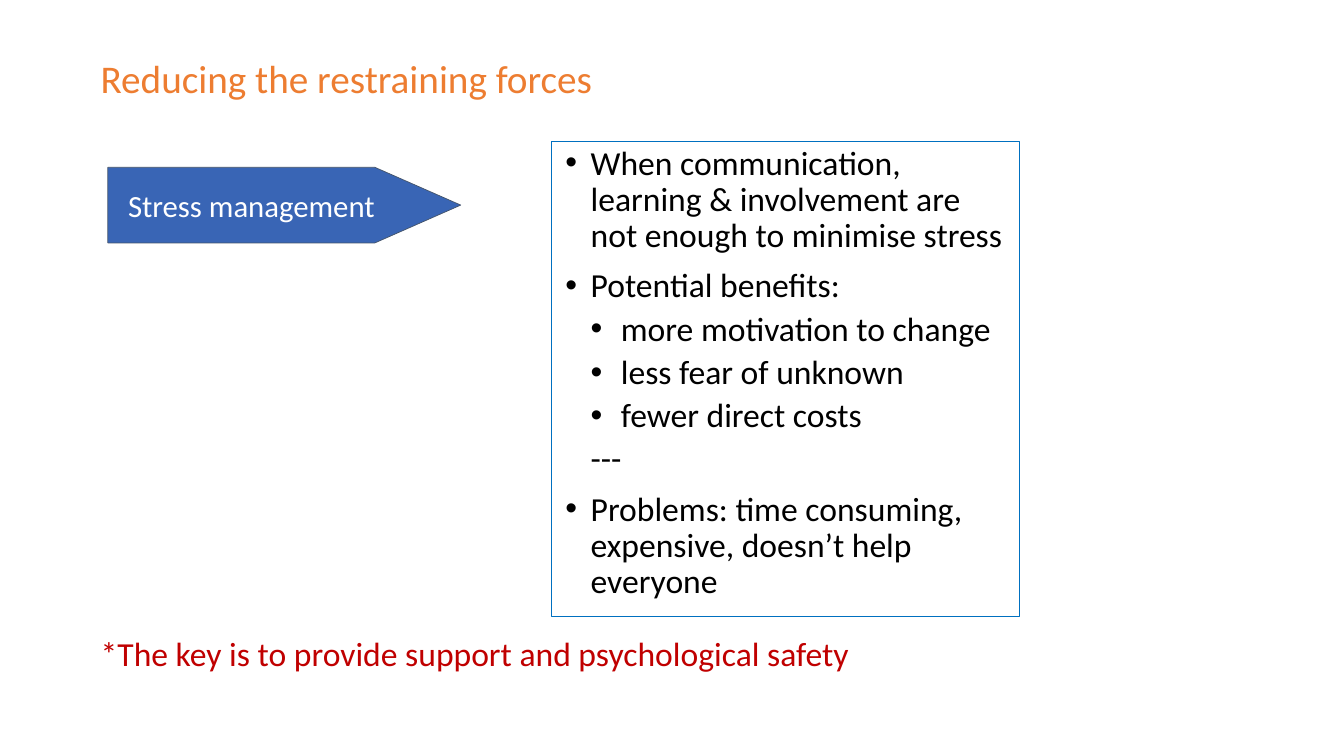
import pptx
import pptx.util
import pptx.dml.color
import pptx.enum.shapes
import pptx.enum.text
from lxml import etree

Inches, Pt = pptx.util.Inches, pptx.util.Pt
ANCHOR = pptx.enum.text.MSO_ANCHOR
SHAPE = pptx.enum.shapes.MSO_SHAPE

FONT = "Calibri"
COLOURS = {
    "title": "ED7D31",
    "body": "000000",
    "frame": "0070C0",
    "arrow": "3965B5",
    "arrow_line": "44546A",
    "arrow_text": "FFFFFF",
    "key": "C00000",
}

# Paragraph styles: left margin, first-line indent, space before, bullet
STYLES = {
    "point": (0.29, -0.25, 10, True),
    "subpoint": (0.59, -0.3, 5, True),
    "divider": (0.29, 0, 5, False),
}
POINTS = [
    ("point", "When communication, learning & involvement are not enough to minimise stress"),
    ("point", "Potential benefits:"),
    ("subpoint", "more motivation to change"),
    ("subpoint", "less fear of unknown"),
    ("subpoint", "fewer direct costs"),
    ("divider", "---"),
    ("point", "Problems: time consuming, expensive, doesn’t help everyone"),
]


def colour(name):
    return pptx.dml.color.RGBColor.from_string(COLOURS[name])


def add_span(para, text, size, colour_name):
    para.alignment = pptx.enum.text.PP_ALIGN.LEFT
    span = para.add_run()
    span.text = text
    span.font.name = FONT
    span.font.size = Pt(size)
    span.font.color.rgb = colour(colour_name)


def add_outlined(page, kind, box, line, width):
    shape = page.shapes.add_shape(kind, *map(Inches, box))
    shape.shadow.inherit = False
    shape.line.color.rgb = colour(line)
    shape.line.width = Pt(width)
    shape.text_frame.word_wrap = True
    return shape


def add_text_line(page, box, text, size, colour_name, anchor=ANCHOR.TOP):
    frame = page.shapes.add_textbox(*map(Inches, box)).text_frame
    frame.word_wrap = True
    frame.vertical_anchor = anchor
    add_span(frame.paragraphs[0], text, size, colour_name)


def set_bullet(para, margin, indent, bulleted):
    props = para._p.get_or_add_pPr()
    props.set("marL", str(Inches(margin)))
    props.set("indent", str(Inches(indent)))
    if bulleted:
        space = props.nsmap["a"]
        etree.SubElement(props, f"{{{space}}}buFont", typeface="Arial")
        etree.SubElement(props, f"{{{space}}}buChar", char="•")


def add_arrow(page, box, text):
    arrow = add_outlined(page, SHAPE.PENTAGON, box, "arrow_line", 0.5)
    arrow.adjustments[0] = 1.135
    arrow.fill.solid()
    arrow.fill.fore_color.rgb = colour("arrow")
    frame = arrow.text_frame
    frame.margin_left = Inches(0.2)
    frame.vertical_anchor = ANCHOR.MIDDLE
    add_span(frame.paragraphs[0], text, 22, "arrow_text")


def add_points(page, box, points):
    panel = add_outlined(page, SHAPE.RECTANGLE, box, "frame", 0.75)
    panel.fill.background()
    frame = panel.text_frame
    frame.vertical_anchor = ANCHOR.TOP
    for index, (style, text) in enumerate(points):
        para = frame.add_paragraph() if index else frame.paragraphs[0]
        margin, indent, before, bulleted = STYLES[style]
        para.line_spacing = 0.9
        para.space_before = Pt(before)
        set_bullet(para, margin, indent, bulleted)
        add_span(para, text, 24, "body")


def main():
    deck = pptx.Presentation()
    deck.slide_width, deck.slide_height = Inches(13.33), Inches(7.5)
    page = deck.slides.add_slide(deck.slide_layouts[6])

    # Title
    add_text_line(page, (0.9, 0.26, 8.45, 1.02), "Reducing the restraining forces",
                  28, "title", ANCHOR.MIDDLE)
    # Strategy and its explanation
    add_points(page, (5.47, 1.4, 4.64, 4.72), POINTS)
    add_arrow(page, (1.07, 1.66, 3.5, 0.75), "Stress management")
    # Key message
    add_text_line(page, (0.9, 6.23, 11.88, 0.5),
                  "*The key is to provide support and psychological safety", 24, "key")

    deck.save("out.pptx")


if __name__ == "__main__":
    main()
